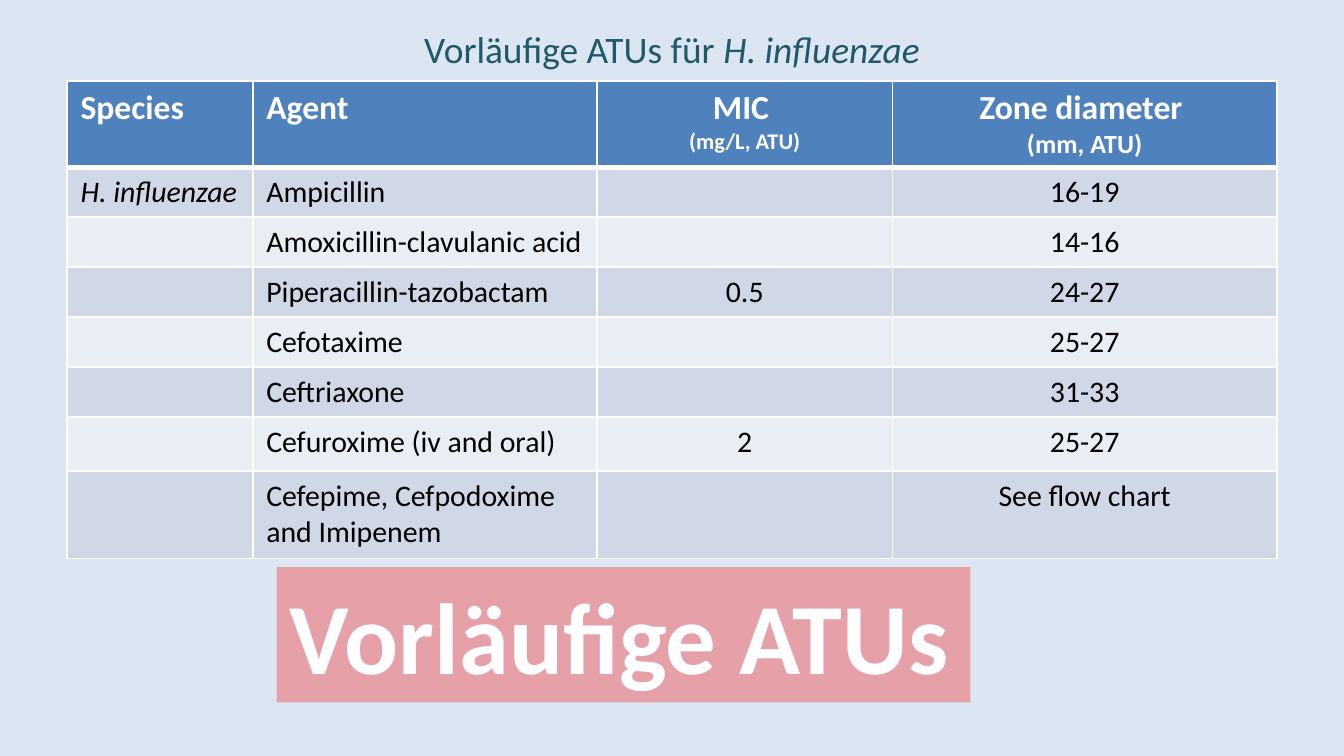
"""Builds the slide of provisional ATUs for H. influenzae."""
from lxml import etree
from pptx import Presentation
from pptx.dml.color import RGBColor
from pptx.enum.text import MSO_ANCHOR, MSO_AUTO_SIZE, PP_ALIGN
from pptx.oxml.ns import qn
from pptx.util import Cm, Pt

LEFT, CENTER = PP_ALIGN.LEFT, PP_ALIGN.CENTER
MIDDLE, GROW = MSO_ANCHOR.MIDDLE, MSO_AUTO_SIZE.SHAPE_TO_FIT_TEXT

TITLE = [("Vorläufige ATUs für ", False), ("H. influenzae", True)]
HEADER = [["Species"], ["Agent"], ["MIC ", "(mg/L, ATU)"], ["Zone diameter ", "(mm, ATU)"]]
HEADER_SIZES = [[18], [18], [18, 12], [18, 14]]
ROWS = [
    ("H. influenzae", "Ampicillin", "", "16-19"),
    ("", "Amoxicillin-clavulanic acid", "", "14-16"),
    ("", "Piperacillin-tazobactam", "0.5", "24-27"),
    ("", "Cefotaxime", "", "25-27"),
    ("", "Ceftriaxone", "", "31-33"),
    ("", "Cefuroxime (iv and oral)", "2", "25-27"),
    ("", "Cefepime, Cefpodoxime and Imipenem", "", "See flow chart"),
]
BANNER = "Vorläufige ATUs"

THEME = {
    "font": "Calibri", "background": "DCE6F2", "title": "215968", "header": "4F81BD",
    "bands": ("D0D8E8", "E9EDF4"), "light": "FFFFFF", "dark": "000000", "banner": "FF0000",
    "title_size": 20, "body_size": 16, "banner_size": 54, "banner_alpha": 30,
    "line": 1, "header_line": 3,
}
TITLE_BOX = (1.27, 0.3, 22.86, 1.24)
TABLE_BOX = (1.27, 1.53, 22.86, 9)
BANNER_BOX = (5.23, 10.72, 13.11, 2.56)
COLUMN_WIDTHS = (3.51, 6.5, 5.59, 7.26)
ROW_HEIGHTS = [1.63] + [0.94] * 5 + [1.02, 1.65]
ALIGNMENTS = (LEFT, LEFT, CENTER, CENTER)


def box(values):
    return [Cm(v) for v in values]


def color(name):
    return RGBColor.from_string(name)


def style(p, size, rgb, bold=False, italic=False, align=LEFT):
    p.alignment = align
    font = p.font
    font.name, font.size, font.bold, font.italic = THEME["font"], Pt(size), bold, italic
    font.color.rgb = color(rgb)


def add_borders(cell, top, bottom):
    tc_pr = cell._tc.get_or_add_tcPr()
    sides = {"lnL": THEME["line"], "lnR": THEME["line"], "lnT": top, "lnB": bottom}
    for side, width in sides.items():
        ln = etree.SubElement(tc_pr, qn(f"a:{side}"), w=str(Pt(width)))
        fill = etree.SubElement(ln, qn("a:solidFill"))
        etree.SubElement(fill, qn("a:srgbClr"), val=THEME["light"])


def fill_cell(cell, row, col, lines, sizes):
    header = row == 0
    thick, thin = THEME["header_line"], THEME["line"]
    add_borders(cell, thick if row == 1 else thin, thick if header else thin)
    cell.fill.solid()
    fill = THEME["header"] if header else THEME["bands"][(row - 1) % 2]
    cell.fill.fore_color.rgb = color(fill)
    cell.text_frame.text = "\n".join(lines)
    rgb = THEME["light"] if header else THEME["dark"]
    for p, size in zip(cell.text_frame.paragraphs, sizes):
        style(p, size, rgb, header, not header and col == 0, ALIGNMENTS[col])
        if not p.text:
            p._p.get_or_add_endParaRPr().set("sz", str(size * 100))


def add_title(slide):
    s = slide.shapes.title
    s.left, s.top, s.width, s.height = box(TITLE_BOX)
    s.text_frame.vertical_anchor = MIDDLE
    p = s.text_frame.paragraphs[0]
    style(p, THEME["title_size"], THEME["title"], align=CENTER)
    for text, italic in TITLE:
        r = p.add_run()
        r.text, r.font.italic = text, italic


def add_atu_table(slide):
    size = len(ROW_HEIGHTS), len(COLUMN_WIDTHS)
    table = slide.shapes.add_table(*size, *box(TABLE_BOX)).table
    for column, width in zip(table.columns, COLUMN_WIDTHS):
        column.width = Cm(width)
    for row, height in zip(table.rows, ROW_HEIGHTS):
        row.height = Cm(height)
    for col, (lines, sizes) in enumerate(zip(HEADER, HEADER_SIZES)):
        fill_cell(table.cell(0, col), 0, col, lines, sizes)
    for row, values in enumerate(ROWS, 1):
        for col, text in enumerate(values):
            fill_cell(table.cell(row, col), row, col, [text], [THEME["body_size"]])


def add_banner(slide):
    s = slide.shapes.add_textbox(*box(BANNER_BOX))
    s.fill.solid()
    s.fill.fore_color.rgb = color(THEME["banner"])
    rgb = s._element.spPr.find(f".//{qn('a:srgbClr')}")
    etree.SubElement(rgb, qn("a:alpha"), val=str(THEME["banner_alpha"] * 1000))
    tf = s.text_frame
    tf.word_wrap, tf.auto_size = False, GROW
    tf.text = BANNER
    style(tf.paragraphs[0], THEME["banner_size"], THEME["light"], bold=True)


def main():
    prs = Presentation()
    prs.slide_width, prs.slide_height = Cm(25.4), Cm(14.29)
    slide = prs.slides.add_slide(prs.slide_layouts[5])
    slide.background.fill.solid()
    slide.background.fill.fore_color.rgb = color(THEME["background"])
    add_title(slide)
    add_atu_table(slide)
    add_banner(slide)
    prs.save("out.pptx")


if __name__ == "__main__":
    main()
